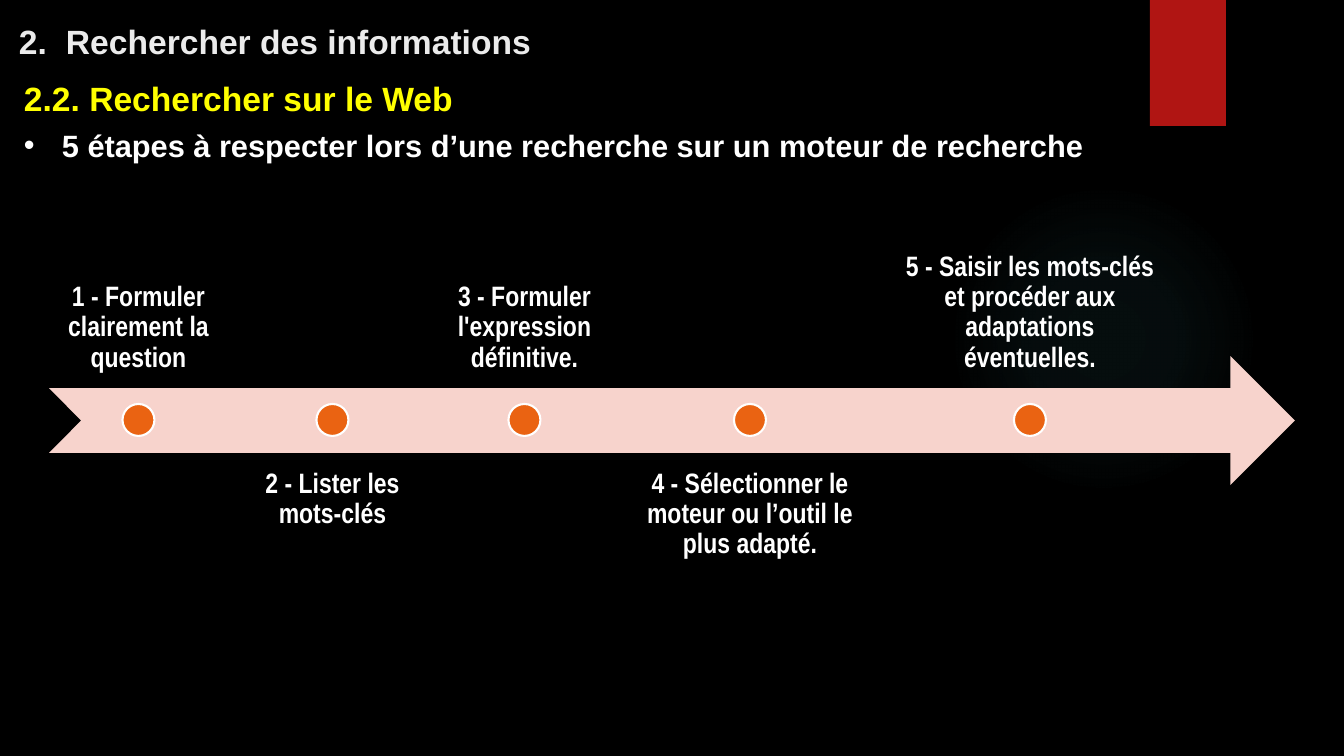
"""Build a slide with a five-step timeline for searching the Web."""
from lxml import etree
from pptx import Presentation
from pptx.dml.color import RGBColor
from pptx.enum.shapes import MSO_SHAPE
from pptx.enum.text import MSO_ANCHOR, PP_ALIGN
from pptx.oxml import parse_xml
from pptx.oxml.ns import nsdecls, qn
from pptx.util import Emu, Pt

RECTANGLE = MSO_SHAPE.RECTANGLE
OVAL = MSO_SHAPE.OVAL
NOTCHED_ARROW = MSO_SHAPE.NOTCHED_RIGHT_ARROW
TOP = MSO_ANCHOR.TOP
BOTTOM = MSO_ANCHOR.BOTTOM
CENTER = PP_ALIGN.CENTER

EMU_PER_PX = 914400 / 100.8
COLORS = {
    "background": "000000",
    "glow": "50B9C1",
    "ribbon": "B01513",
    "title": "EBEBEB",
    "subtitle": "FFFF00",
    "text": "FFFFFF",
    "arrow": "F7D3CC",
    "dot": "EA6312",
}
GLOW_STOPS = [(0, 7), (36, 6), (69, 0)]
STEPS = [
    ("1 - Formuler clairement la question", 177),
    ("2 - Lister les mots-clés", 195),
    ("3 - Formuler l'expression définitive.", 173),
    ("4 - Sélectionner le moteur ou l’outil le plus adapté.", 262),
    ("5 - Saisir les mots-clés et procéder aux adaptations éventuelles.", 282),
]
STEPS_LEFT = 50
STEP_GAP = 8
LABEL_HEIGHT = 129
LABEL_TOPS = (260, 453)
LABEL_INSET = 16
DOT_SIZE = 32
DOT_TOP = 404


def px(length):
    """Turn pixels into EMU."""
    return Emu(round(length * EMU_PER_PX))


def color(name):
    """Return a named colour of the slide."""
    return RGBColor.from_string(COLORS[name])


def add_shape(slide, kind, box, fill, line=None):
    """Add a flat preset shape."""
    shape = slide.shapes.add_shape(kind, *map(px, box))
    shape.shadow.inherit = False
    shape.fill.solid()
    shape.fill.fore_color.rgb = color(fill)
    if line:
        shape.line.color.rgb = color(line)
        shape.line.width = Pt(1.5)
    else:
        shape.line.fill.background()
    return shape


def add_glow(slide, box):
    """Add a circle that fades out from its centre."""
    shape = add_shape(slide, OVAL, box, "glow")
    stops = "".join(
        f'<a:gs pos="{position * 1000}"><a:srgbClr val="{COLORS["glow"]}">'
        f'<a:alpha val="{alpha * 1000}"/></a:srgbClr></a:gs>'
        for position, alpha in GLOW_STOPS
    )
    gradient = parse_xml(
        f'<a:gradFill {nsdecls("a")} rotWithShape="1"><a:gsLst>{stops}</a:gsLst>'
        '<a:path path="circle"><a:fillToRect l="50000" t="50000" r="50000" '
        'b="50000"/></a:path></a:gradFill>'
    )
    properties = shape.fill._xPr
    properties.replace(properties.find(qn("a:solidFill")), gradient)


def add_text_box(slide, box, anchor=TOP, insets=(10, 5, 10, 5)):
    """Add a wrapping text box and return its text frame."""
    frame = slide.shapes.add_textbox(*map(px, box)).text_frame
    frame.word_wrap = True
    frame.vertical_anchor = anchor
    frame.margin_left, frame.margin_top, frame.margin_right, frame.margin_bottom = map(
        px, insets
    )
    return frame


def write(paragraph, text, size, color_name, font="Arial"):
    """Put bold text into a paragraph."""
    paragraph.text = text
    for run in paragraph.runs:
        run.font.name = font
        run.font.size = Pt(size)
        run.font.bold = True
        run.font.color.rgb = color(color_name)


def add_tab_stop(paragraph, position):
    """Give a paragraph one left tab stop."""
    tabs = etree.SubElement(paragraph._p.get_or_add_pPr(), qn("a:tabLst"))
    etree.SubElement(tabs, qn("a:tab"), pos=str(px(position)), algn="l")


def add_bullet(paragraph, indent):
    """Give a paragraph a round bullet and a hanging indent."""
    properties = paragraph._p.get_or_add_pPr()
    properties.set("marL", str(px(indent)))
    properties.set("indent", str(-px(indent)))
    bullet_color = etree.SubElement(properties, qn("a:buClr"))
    etree.SubElement(bullet_color, qn("a:srgbClr"), val=COLORS["text"])
    etree.SubElement(properties, qn("a:buFont"), typeface="Arial")
    etree.SubElement(properties, qn("a:buChar"), char="•")


def add_headings(slide):
    """Add the title, the subtitle and the bulleted introduction."""
    title = add_text_box(slide, (0, 16, 996, 50), BOTTOM, (19, 5, 10, 5)).paragraphs[0]
    add_tab_stop(title, 47)
    write(title, "2.\tRechercher des informations", 24, "title")

    frame = add_text_box(slide, (14, 73, 1118, 97))
    subtitle = frame.paragraphs[0]
    write(subtitle, "2.2. Rechercher sur le Web", 24, "subtitle")
    subtitle.space_after = Pt(6)
    introduction = frame.add_paragraph()
    add_bullet(introduction, 38)
    write(
        introduction,
        "5 étapes à respecter lors d’une recherche sur un moteur de recherche",
        22,
        "text",
    )


def add_step(slide, index, text, left, width):
    """Add a step's label, alternately above and below, and its dot."""
    below = index % 2
    frame = add_text_box(
        slide,
        (left, LABEL_TOPS[below], width, LABEL_HEIGHT),
        TOP if below else BOTTOM,
        (LABEL_INSET,) * 4,
    )
    paragraph = frame.paragraphs[0]
    paragraph.alignment = CENTER
    paragraph.line_spacing = 0.9
    write(paragraph, text, 20, "text", "Arial Narrow")
    dot_left = left + (width - DOT_SIZE) / 2
    add_shape(slide, OVAL, (dot_left, DOT_TOP, DOT_SIZE, DOT_SIZE), "dot", "text")


def add_timeline(slide):
    """Add the arrow and its steps from left to right."""
    add_shape(slide, NOTCHED_ARROW, (49, 356, 1246, 129), "arrow")
    left = STEPS_LEFT
    for index, (text, width) in enumerate(STEPS):
        add_step(slide, index, text, left, width)
        left += width + STEP_GAP


def main():
    """Build and save the presentation."""
    presentation = Presentation()
    presentation.slide_width = px(1344)
    presentation.slide_height = px(756)
    slide = presentation.slides.add_slide(presentation.slide_layouts[6])
    slide.background.fill.solid()
    slide.background.fill.fore_color.rgb = color("background")
    add_glow(slide, (949, 184, 310, 310))
    add_shape(slide, RECTANGLE, (1150, 0, 76, 126), "ribbon")
    add_headings(slide)
    add_timeline(slide)
    presentation.save("out.pptx")


if __name__ == "__main__":
    main()
